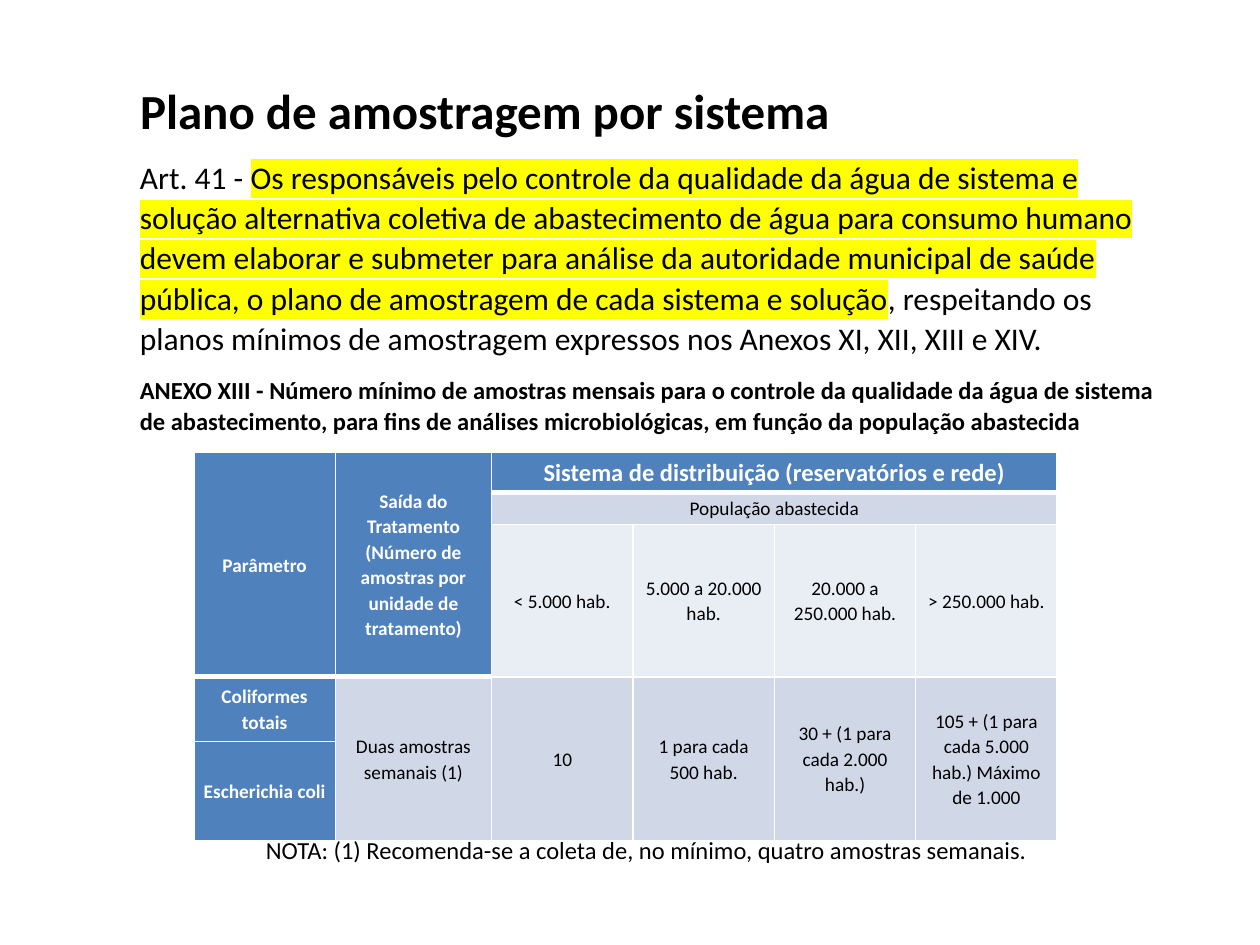
from dataclasses import dataclass

from lxml import etree
from pptx import Presentation
from pptx.dml.color import RGBColor
from pptx.enum.text import MSO_ANCHOR, MSO_AUTO_SIZE, PP_ALIGN
from pptx.oxml.ns import qn
from pptx.util import Cm, Pt

TOP, MIDDLE = MSO_ANCHOR.TOP, MSO_ANCHOR.MIDDLE
LEFT, CENTER = PP_ALIGN.LEFT, PP_ALIGN.CENTER
NO_AUTOFIT = MSO_AUTO_SIZE.NONE


@dataclass(frozen=True)
class Theme:
    font: str = "Calibri"
    black: str = "000000"
    white: str = "FFFFFF"
    header: str = "4F81BD"
    band: str = "D0D8E8"
    light: str = "E9EDF4"
    marker: str = "FFFF00"
    title_size: int = 28
    body_size: int = 18
    note_size: int = 14
    cell_size: int = 11
    line_spacing: float = 1.07
    thin: int = 1
    thick: int = 3


THEME = Theme()

# Content
TITLE = "Plano de amostragem por sistema"
ARTICLE = [  # text, highlighted
    ("Art. 41 - ", False),
    ("Os responsáveis pelo controle da qualidade da água de sistema e solução "
     "alternativa coletiva de abastecimento de água para consumo humano devem "
     "elaborar e submeter para análise da autoridade municipal de saúde pública, "
     "o plano de amostragem de cada sistema e solução", True),
    (", respeitando os planos mínimos de amostragem expressos nos Anexos XI, XII, "
     "XIII e XIV.", False),
]
CAPTION = ("ANEXO XIII - Número mínimo de amostras mensais para o controle da qualidade "
           "da água de sistema de abastecimento, para fins de análises microbiológicas, "
           "em função da população abastecida")
NOTE = "NOTA: (1) Recomenda-se a coleta de, no mínimo, quatro amostras semanais."

POPULATIONS = ["< 5.000 hab.", "5.000 a 20.000 hab.", "20.000 a 250.000 hab.",
               "> 250.000 hab."]
SAMPLES = ["Duas amostras semanais (1)", "10", "1 para cada 500 hab.",
           "30 + (1 para cada 2.000 hab.)",
           "105 + (1 para cada 5.000 hab.) Máximo de 1.000"]
# Cells: row, column, rows spanned, columns spanned, text, fill
CELLS = [
    (0, 0, 3, 1, "Parâmetro", THEME.header),
    (0, 1, 3, 1, "Saída do Tratamento (Número de amostras por unidade de tratamento)",
     THEME.header),
    (0, 2, 1, 4, "Sistema de distribuição (reservatórios e rede)", THEME.header),
    (1, 2, 1, 4, "População abastecida", THEME.band),
    *[(2, 2 + i, 1, 1, text, THEME.light) for i, text in enumerate(POPULATIONS)],
    (3, 0, 1, 1, "Coliformes totais", THEME.header),
    *[(3, 1 + i, 2, 1, text, THEME.band) for i, text in enumerate(SAMPLES)],
    (4, 0, 1, 1, "Escherichia coli", THEME.header),
]
THICK_TOPS = {(1, 2), (3, 0), (3, 1)}  # cells right under the header block

# Layout in cm
TEXT_LEFT, TEXT_WIDTH = 2.57, 21.36
TABLE_LEFT, TABLE_TOP = 3.91, 9.12
COLUMNS = [2.85, 3.15] + [2.85] * 4
ROWS = [0.81, 0.64, 2.51, 1.3, 2.01]
CELL_INSET = 0.18


def add_run(paragraph, text, size, color=THEME.black, bold=False, highlighted=False):
    run = paragraph.add_run()
    run.text = text
    run.font.size = Pt(size)
    run.font.bold = bold
    run.font.name = THEME.font
    run.font.color.rgb = RGBColor.from_string(color)
    if highlighted:
        highlight = etree.Element(qn("a:highlight"))
        etree.SubElement(highlight, qn("a:srgbClr"), val=THEME.marker)
        run.font._element.find(qn("a:solidFill")).addnext(highlight)


def format_frame(frame):
    frame.word_wrap = True
    frame.auto_size = NO_AUTOFIT
    frame.vertical_anchor = TOP
    paragraph = frame.paragraphs[0]
    paragraph.alignment = LEFT
    paragraph.line_spacing = THEME.line_spacing
    return paragraph


def add_text(slide, left, top, width, height):
    box = slide.shapes.add_textbox(Cm(left), Cm(top), Cm(width), Cm(height))
    return format_frame(box.text_frame)


def add_borders(cell, top, bottom):
    properties = cell._tc.get_or_add_tcPr()
    for side, weight in (("L", THEME.thin), ("R", THEME.thin), ("T", top), ("B", bottom)):
        line = etree.SubElement(properties, qn(f"a:ln{side}"), w=str(Pt(weight)))
        fill = etree.SubElement(line, qn("a:solidFill"))
        etree.SubElement(fill, qn("a:srgbClr"), val=THEME.white)


def add_sampling_table(slide):
    table = slide.shapes.add_table(
        len(ROWS), len(COLUMNS), Cm(TABLE_LEFT), Cm(TABLE_TOP),
        Cm(sum(COLUMNS)), Cm(sum(ROWS))).table
    for column, width in zip(table.columns, COLUMNS):
        column.width = Cm(width)
    for table_row, height in zip(table.rows, ROWS):
        table_row.height = Cm(height)

    for row, column, row_span, column_span, text, fill in CELLS:
        cell = table.cell(row, column)
        if row_span * column_span > 1:
            cell.merge(table.cell(row + row_span - 1, column + column_span - 1))
        add_borders(cell,
                    THEME.thick if (row, column) in THICK_TOPS else THEME.thin,
                    THEME.thick if row == 0 else THEME.thin)
        cell.fill.solid()
        cell.fill.fore_color.rgb = RGBColor.from_string(fill)
        cell.vertical_anchor = MIDDLE
        cell.margin_left = cell.margin_right = Cm(CELL_INSET)
        cell.margin_top = cell.margin_bottom = 0
        paragraph = cell.text_frame.paragraphs[0]
        paragraph.alignment = CENTER
        paragraph.line_spacing = THEME.line_spacing
        is_header = fill == THEME.header
        size = THEME.note_size if (row, column) == (0, 2) else THEME.cell_size
        add_run(paragraph, text, size, THEME.white if is_header else THEME.black, is_header)


def main():
    deck = Presentation()
    deck.slide_width, deck.slide_height = Cm(25.4), Cm(19.05)
    slide = deck.slides.add_slide(deck.slide_layouts[5])

    # Title
    title = slide.shapes.title
    title.left, title.top = Cm(TEXT_LEFT), Cm(1.42)
    title.width, title.height = Cm(TEXT_WIDTH), Cm(1.55)
    add_run(format_frame(title.text_frame), TITLE, THEME.title_size, bold=True)

    # Article text
    article = add_text(slide, TEXT_LEFT, 3, TEXT_WIDTH, 4.37)
    for text, highlighted in ARTICLE:
        add_run(article, text, THEME.body_size, highlighted=highlighted)

    # Annex caption, table and note
    add_run(add_text(slide, TEXT_LEFT, 7.39, TEXT_WIDTH, 1.6),
            CAPTION, THEME.note_size, bold=True)
    add_sampling_table(slide)
    add_run(add_text(slide, TEXT_LEFT + 2.54, 16.67, TEXT_WIDTH - 2.54, 0.95),
            NOTE, THEME.note_size)

    deck.save("out.pptx")


if __name__ == "__main__":
    main()
